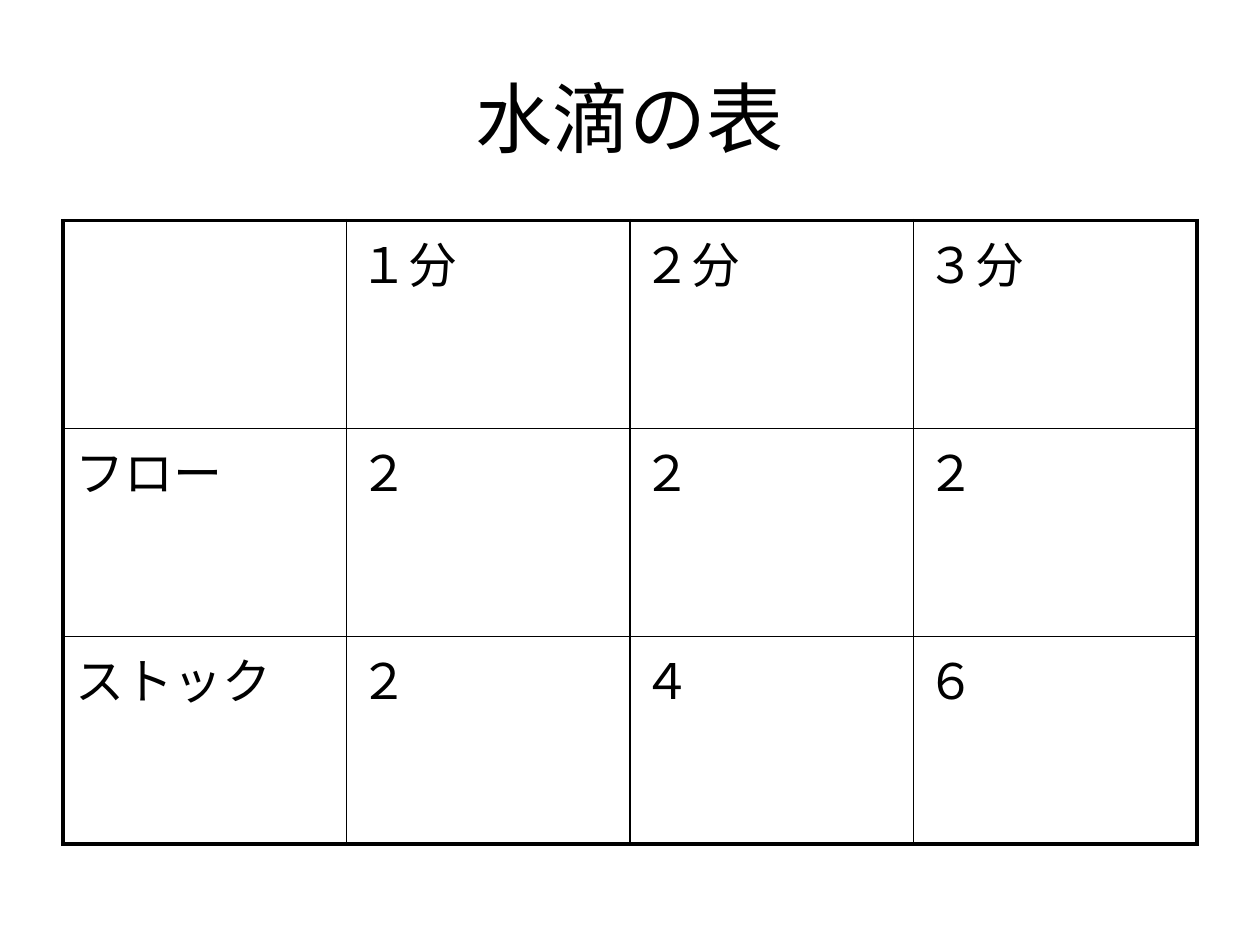
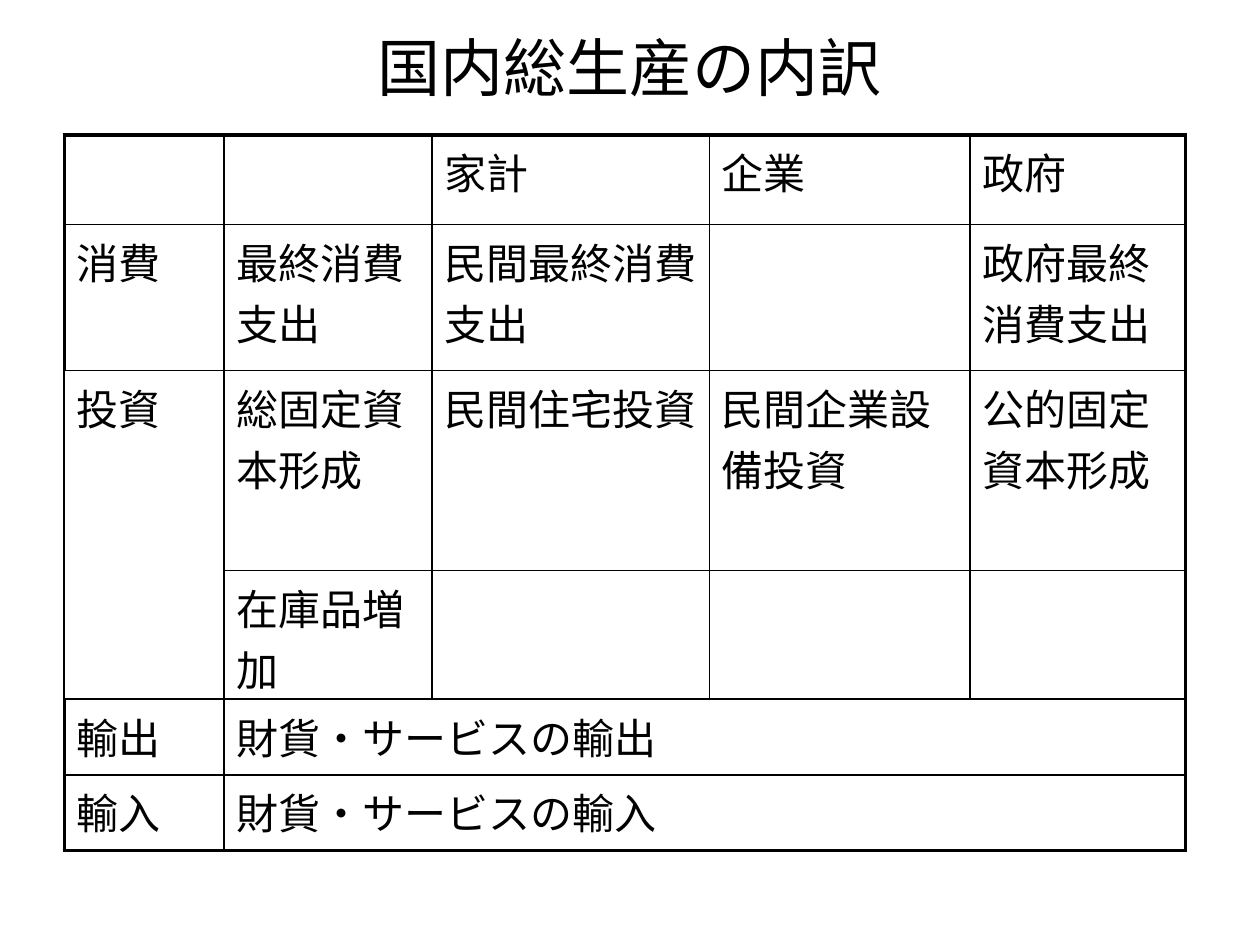
"""Build two slides, each a centred title above a ruled table."""
from lxml import etree
from pptx import Presentation
from pptx.dml.color import RGBColor
from pptx.enum.text import MSO_ANCHOR, PP_ALIGN
from pptx.oxml.ns import qn
from pptx.util import Emu, Pt

MIDDLE = MSO_ANCHOR.MIDDLE
CENTER = PP_ALIGN.CENTER
PX = 9144
COLORS = {"ink": "000000"}
TITLE_FONT = "Noto Sans CJK JP"
BODY_FONT = "Times New Roman"
THIN, THICK = 1, 2.25

PAGES = [
    {
        "title": "水滴の表", "title_size": 44, "title_height": 125,
        "corner": (50, 175), "columns": [225] * 4, "rows": [165] * 3, "size": 28,
        "cells": [
            ["", "１分", "２分", "３分"],
            ["フロー", "２", "２", "２"],
            ["ストック", "２", "４", "６"],
        ],
        "wide_rows": [], "open_rows": [],
    },
    {
        "title": "国内総生産の内訳", "title_size": 36, "title_height": 46,
        "corner": (51, 107), "columns": [127, 165, 220, 207, 171],
        "rows": [71, 116, 159, 102, 60, 60], "size": 24,
        "cells": [
            ["", "", "家計", "企業", "政府"],
            ["消費", "最終消費支出", "民間最終消費支出", "", "政府最終消費支出"],
            ["投資", "総固定資本形成", "民間住宅投資", "民間企業設備投資", "公的固定資本形成"],
            ["", "在庫品増加", "", "", ""],
            ["輸出", "財貨・サービスの輸出", "", "", ""],
            ["輸入", "財貨・サービスの輸入", "", "", ""],
        ],
        "wide_rows": [4, 5], "open_rows": [2, 3],
    },
]


def style_text(frame, font, size):
    for para in frame.paragraphs:
        for span in para.runs:
            span.font.name = font
            span.font.size = Pt(size)
            span.font.color.rgb = RGBColor.from_string(COLORS["ink"])
            east_asian = etree.SubElement(span.font._element, qn("a:ea"))
            east_asian.set("typeface", TITLE_FONT)


def draw_borders(cell, widths):
    properties = cell._tc.get_or_add_tcPr()
    for side in "LRTB":
        line = etree.SubElement(properties, qn(f"a:ln{side}"))
        line.set("w", str(Pt(widths[side])))
        if widths[side]:
            fill = etree.SubElement(line, qn("a:solidFill"))
            etree.SubElement(fill, qn("a:srgbClr")).set("val", COLORS["ink"])
        else:
            etree.SubElement(line, qn("a:noFill"))


deck = Presentation()
deck.slide_width = Emu(1000 * PX)
deck.slide_height = Emu(750 * PX)

for content in PAGES:
    page = deck.slides.add_slide(deck.slide_layouts[6])

    title = page.shapes.add_textbox(50 * PX, 30 * PX, 900 * PX, content["title_height"] * PX)
    title.text_frame.word_wrap = True
    title.text_frame.vertical_anchor = MIDDLE
    title.text_frame.text = content["title"]
    title.text_frame.paragraphs[0].alignment = CENTER
    style_text(title.text_frame, TITLE_FONT, content["title_size"])

    left, top = content["corner"]
    columns, rows = content["columns"], content["rows"]
    last_column, last_row = len(columns) - 1, len(rows) - 1
    table = page.shapes.add_table(
        len(rows), len(columns), left * PX, top * PX, sum(columns) * PX, sum(rows) * PX
    ).table
    table.first_row = False
    table.horz_banding = False
    for column, width in zip(table.columns, columns):
        column.width = Emu(width * PX)
    for row, height in zip(table.rows, rows):
        row.height = Emu(height * PX)
    for r in content["wide_rows"]:
        table.cell(r, 1).merge(table.cell(r, last_column))

    for r, texts in enumerate(content["cells"]):
        for c, text in enumerate(texts):
            cell = table.cell(r, c)
            reaches_right = c == last_column or (c == 1 and r in content["wide_rows"])
            widths = {
                "L": THICK if c == 0 else THIN,
                "R": THICK if reaches_right else THIN,
                "T": THICK if r == 0 else THIN,
                "B": THICK if r == last_row else THIN,
            }
            if c == 0 and r in content["open_rows"]:
                widths["L"] = THIN
                widths["B" if r == content["open_rows"][0] else "T"] = 0
            draw_borders(cell, widths)
            cell.fill.background()
            if text:
                cell.text_frame.text = text
                cell.text_frame.paragraphs[0].space_before = Pt(content["size"] * 0.2)
                style_text(cell.text_frame, BODY_FONT, content["size"])

deck.save("out.pptx")
